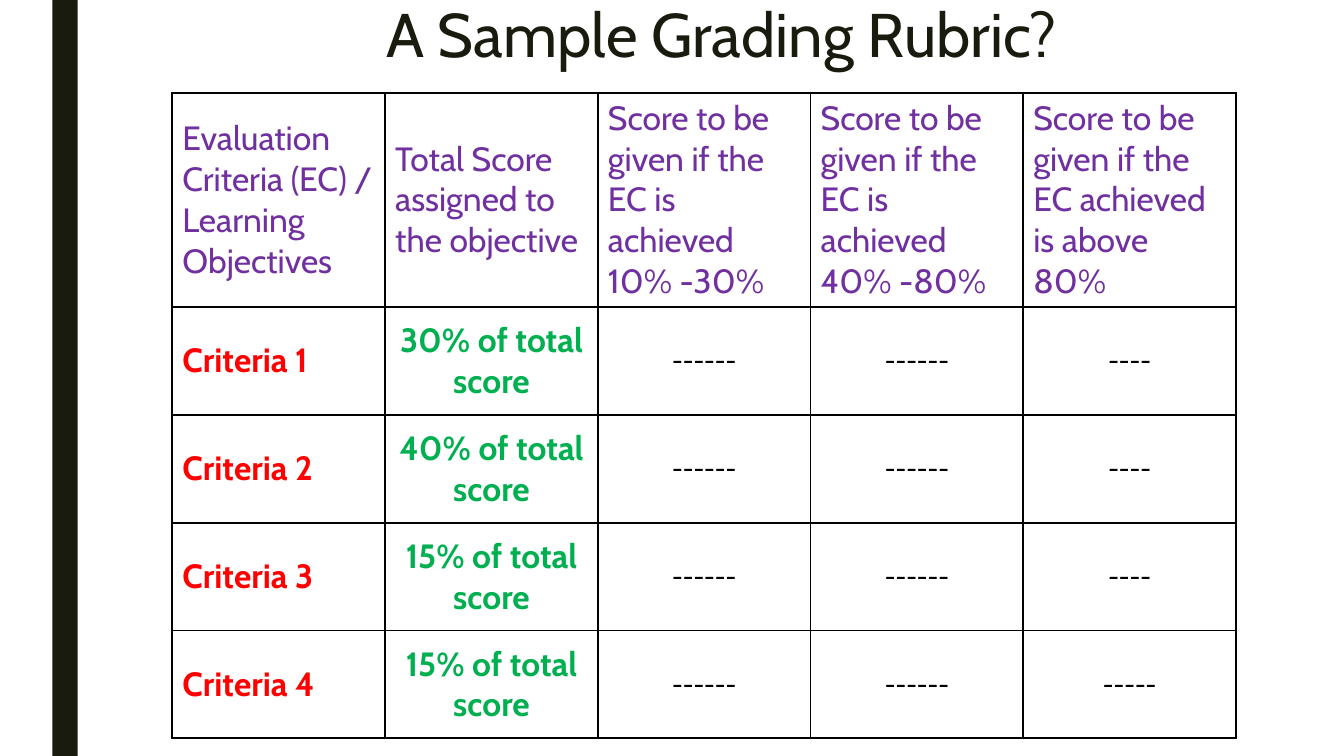
from dataclasses import dataclass

import lxml.etree
import pptx
import pptx.dml.color
import pptx.enum.shapes
import pptx.enum.text
import pptx.oxml.ns
import pptx.table
import pptx.util
from pptx.util import Inches

FONT = "Cabin"
COLORS = {
    "dark": "191B0E",
    "header": "7030A0",
    "criterion": "FF0000",
    "weight": "00B050",
    "black": "000000",
}
LEFT = pptx.enum.text.PP_ALIGN.LEFT
CENTER = pptx.enum.text.PP_ALIGN.CENTER


@dataclass(frozen=True)
class TextStyle:
    color: str
    size: int
    bold: bool = False
    align: pptx.enum.text.PP_ALIGN = LEFT


@dataclass(frozen=True)
class Criterion:
    name: str
    weight: str
    scores: tuple[str, str, str]


TITLE = TextStyle("dark", 44)
HEADER = TextStyle("header", 24)
CRITERION = TextStyle("criterion", 24, bold=True)
WEIGHT = TextStyle("weight", 24, bold=True, align=CENTER)
SCORE = TextStyle("black", 18, align=CENTER)

HEADINGS = [
    "Evaluation Criteria (EC) / Learning Objectives",
    "Total Score assigned to the objective",
    "Score to be given if the EC is achieved 10% -30%",
    "Score to be given if the EC is achieved 40% -80%",
    "Score to be given if the EC achieved is above 80%",
]
CRITERIA = [
    Criterion("Criteria 1", "30%", ("------", "------", "----")),
    Criterion("Criteria 2", "40%", ("------", "------", "----")),
    Criterion("Criteria 3", "15%", ("------", "------", "----")),
    Criterion("Criteria 4", "15%", ("------", "------", "-----")),
]


def rgb(name: str) -> pptx.dml.color.RGBColor:
    return pptx.dml.color.RGBColor.from_string(COLORS[name])


def write(tf: pptx.text.text.TextFrame, text: str, style: TextStyle) -> None:
    tf.text = text
    p = tf.paragraphs[0]
    p.alignment = style.align
    p.font.name = FONT
    p.font.size = pptx.util.Pt(style.size)
    p.font.bold = style.bold
    p.font.color.rgb = rgb(style.color)


def add_borders(cell: pptx.table._Cell, width: float = 1.5) -> None:
    """Draw all four cell edges; they must precede the fill in tcPr."""
    tc_pr = cell._tc.get_or_add_tcPr()
    qn = pptx.oxml.ns.qn
    for i, edge in enumerate(("a:lnL", "a:lnR", "a:lnT", "a:lnB")):
        ln = lxml.etree.Element(qn(edge), w=str(pptx.util.Pt(width)))
        fill = lxml.etree.SubElement(ln, qn("a:solidFill"))
        lxml.etree.SubElement(fill, qn("a:srgbClr"), val=COLORS["black"])
        tc_pr.insert(i, ln)


def add_side_bar(slide: pptx.slide.Slide) -> None:
    sp = slide.shapes.add_shape(
        pptx.enum.shapes.MSO_SHAPE.RECTANGLE,
        Inches(0.52), Inches(0), Inches(0.25), Inches(7.5),
    )
    sp.shadow.inherit = False
    sp.fill.solid()
    sp.fill.fore_color.rgb = rgb("dark")
    sp.line.fill.background()


def format_title(slide: pptx.slide.Slide) -> None:
    title = slide.shapes.title
    title.left, title.top = Inches(3.73), Inches(0)
    title.width, title.height = Inches(7.32), Inches(0.99)
    tf = title.text_frame
    write(tf, "A Sample Grading Rubric?", TITLE)
    tf.word_wrap = True
    tf.auto_size = pptx.enum.text.MSO_AUTO_SIZE.NONE
    tf.vertical_anchor = pptx.enum.text.MSO_ANCHOR.TOP
    tf.paragraphs[0].line_spacing = 0.89


def add_rubric(slide: pptx.slide.Slide) -> None:
    rows = [[(heading, HEADER) for heading in HEADINGS]]
    for c in CRITERIA:
        rows.append([
            (c.name, CRITERION),
            (f"{c.weight} of total score", WEIGHT),
            *((score, SCORE) for score in c.scores),
        ])

    table = slide.shapes.add_table(
        len(rows), len(HEADINGS),
        Inches(1.71), Inches(0.92), Inches(10.55), Inches(6.19),
    ).table
    table.first_row = table.horz_banding = False
    for col in table.columns:
        col.width = Inches(2.11)
    for i, row in enumerate(rows):
        table.rows[i].height = Inches(1.07 if i else 1.91)
        for j, (text, style) in enumerate(row):
            cell = table.cell(i, j)
            write(cell.text_frame, text, style)
            cell.vertical_anchor = pptx.enum.text.MSO_ANCHOR.MIDDLE
            cell.fill.background()
            add_borders(cell)


def main() -> None:
    prs = pptx.Presentation()
    prs.slide_width, prs.slide_height = Inches(13.33), Inches(7.5)
    slide = prs.slides.add_slide(prs.slide_layouts.get_by_name("Title Only"))
    add_side_bar(slide)
    format_title(slide)
    add_rubric(slide)
    prs.save("out.pptx")


if __name__ == "__main__":
    main()
